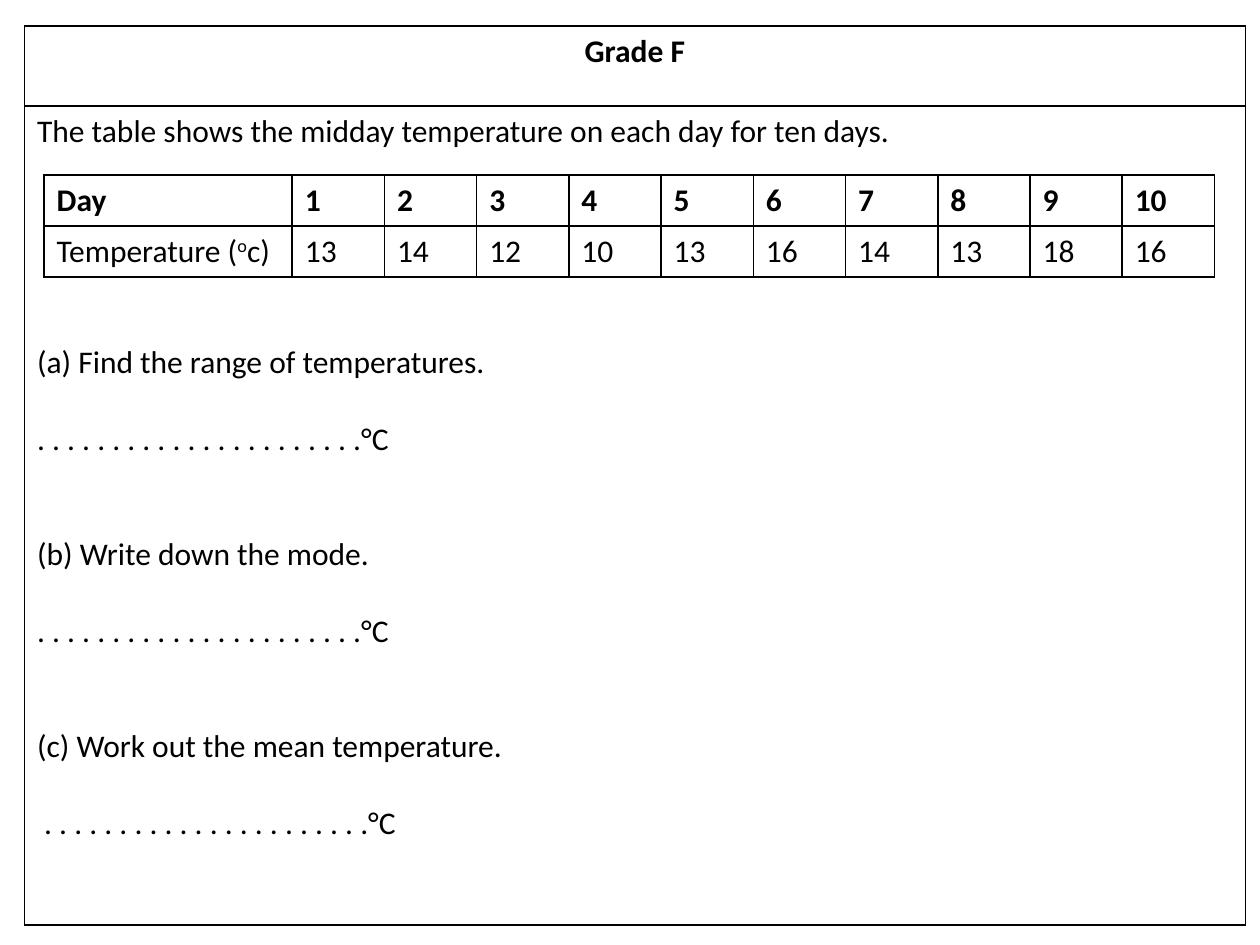
from lxml import etree
from pptx import Presentation
from pptx.dml.color import RGBColor
from pptx.enum.text import PP_ALIGN
from pptx.oxml.ns import qn
from pptx.util import Pt

CENTER = PP_ALIGN.CENTER
COLORS = {"ink": "000000"}
LINE = 22  # height of one text line


def write(para, text, bold=False, raised=False, align=None, before=0):
    span = para.add_run()
    span.text = text
    span.font.name = "Calibri"
    span.font.size = Pt(18)
    span.font.bold = bold
    span.font.color.rgb = RGBColor.from_string(COLORS["ink"])
    if raised:
        span.font._element.set("baseline", "30000")
    if align is not None:
        para.alignment = align
    if before:
        para.space_before = Pt(before)


def add_grid(page, left, top, widths, heights):
    """Add a table without fill, with a thin line round every cell."""
    frame = page.shapes.add_table(len(heights), len(widths), Pt(left), Pt(top),
                                  Pt(sum(widths)), Pt(sum(heights)))
    table = frame.table
    table.first_row = False
    table.horz_banding = False
    for column, width in zip(table.columns, widths):
        column.width = Pt(width)
    for row, height in zip(table.rows, heights):
        row.height = Pt(height)
    for cell in table.iter_cells():
        cell.fill.background()
        properties = cell._tc.get_or_add_tcPr()
        for index, side in enumerate(("lnL", "lnR", "lnT", "lnB")):
            border = etree.Element(qn(f"a:{side}"), w=str(Pt(1)))
            fill = etree.SubElement(border, qn("a:solidFill"))
            etree.SubElement(fill, qn("a:srgbClr"), val=COLORS["ink"])
            properties.insert(index, border)
    return table


deck = Presentation()
deck.slide_width, deck.slide_height = Pt(720), Pt(540)
page = deck.slides.add_slide(deck.slide_layouts[6])

# Outer frame: grade heading above the question
question = add_grid(page, 14, 15, [697.6], [45.5, 468])
write(question.cell(0, 0).text_frame.paragraphs[0], "Grade F", bold=True, align=CENTER)

# Question text, each with the number of free lines above it
answer = ". . . . . . . . . . . . . . . . . . . . . .°C"
lines = [
    ("The table shows the midday temperature on each day for ten days.", 0),
    ("(a) Find the range of temperatures.", 5),
    (answer, 1),
    ("(b) Write down the mode.", 2),
    (answer, 1),
    ("(c) Work out the mean temperature.", 2),
    (" " + answer, 1),
]
body = question.cell(1, 0).text_frame
for index, (text, free_lines) in enumerate(lines):
    para = body.add_paragraph() if index else body.paragraphs[0]
    write(para, text, before=free_lines * LINE)

# Temperature table
temperatures = [13, 14, 12, 10, 13, 16, 14, 13, 18, 16]
readings = add_grid(page, 25.2, 100, [141.8] + [52.7] * len(temperatures), [29.2] * 2)
write(readings.cell(0, 0).text_frame.paragraphs[0], "Day", bold=True)
label = readings.cell(1, 0).text_frame.paragraphs[0]
write(label, "Temperature (")
write(label, "o", raised=True)
write(label, "c)")
for day, temperature in enumerate(temperatures, start=1):
    write(readings.cell(0, day).text_frame.paragraphs[0], str(day), bold=True)
    write(readings.cell(1, day).text_frame.paragraphs[0], str(temperature))

deck.save("out.pptx")
